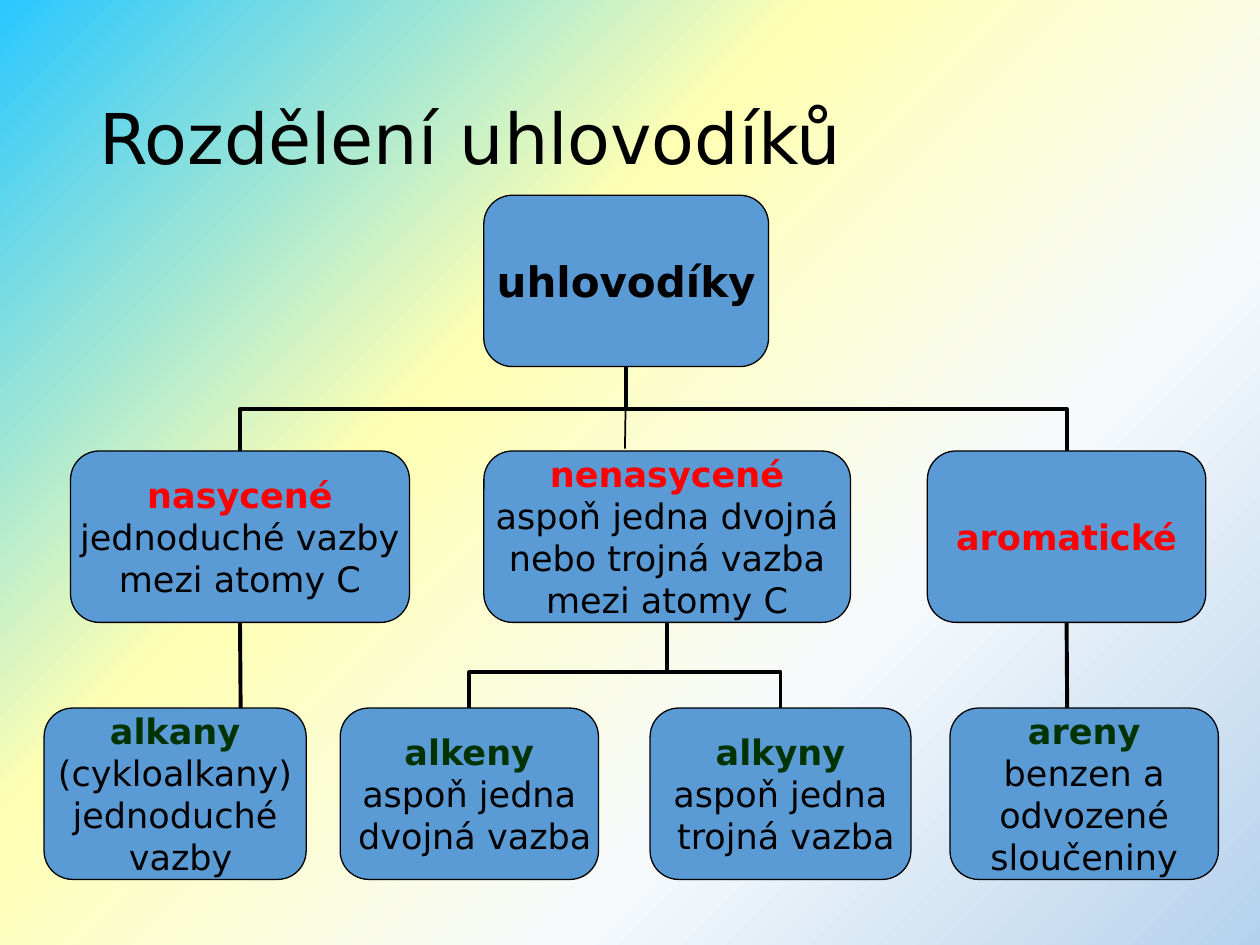
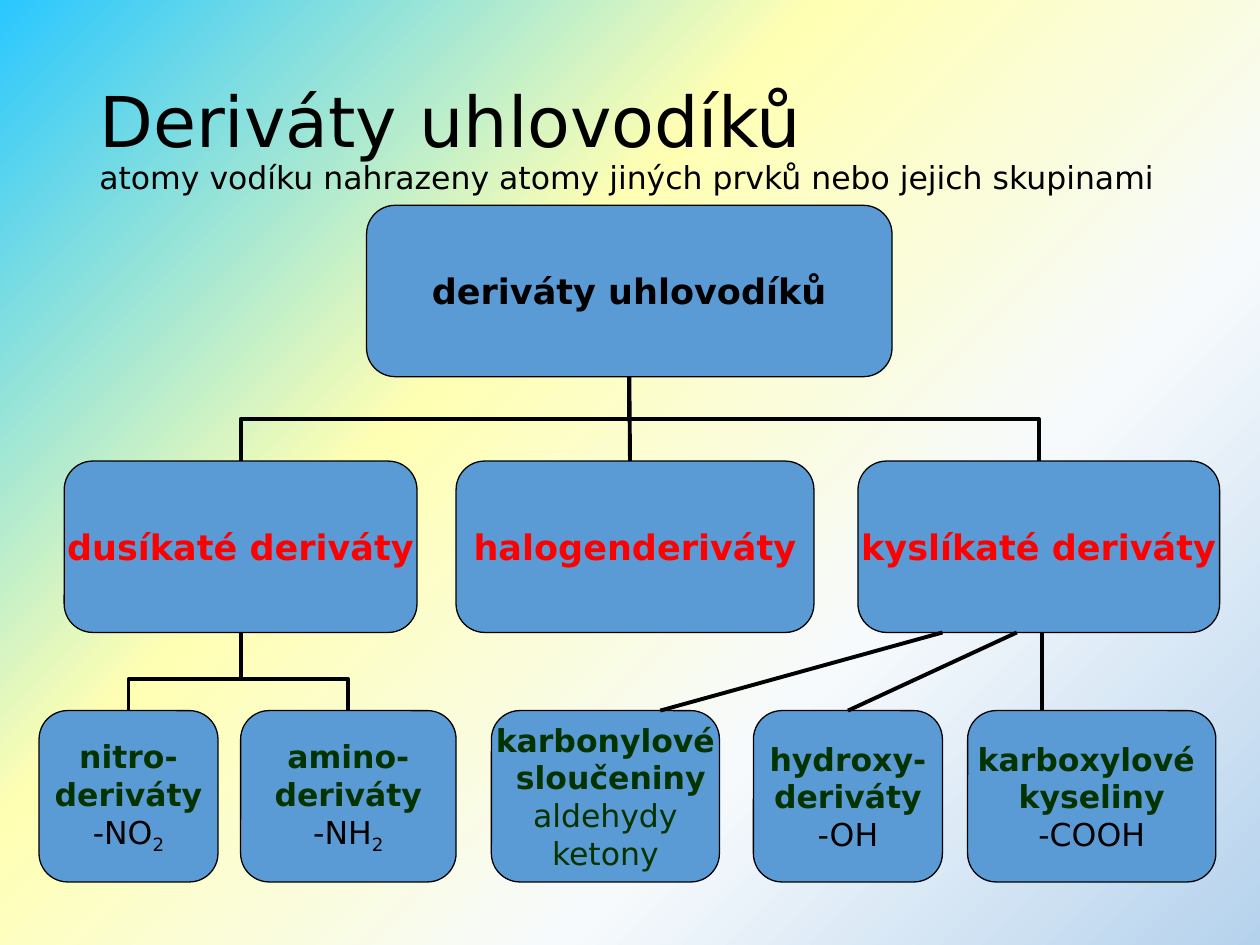
from dataclasses import dataclass

from lxml.etree import SubElement
from pptx import Presentation
from pptx.dml.color import RGBColor
from pptx.enum.shapes import MSO_CONNECTOR as Connector, MSO_SHAPE as Preset
from pptx.enum.text import MSO_ANCHOR as Anchor, PP_ALIGN as Align
from pptx.oxml.ns import qn
from pptx.util import Inches, Pt


@dataclass(frozen=True)
class Theme:
    font: str = "DejaVu Sans"
    black: str = "000000"
    red: str = "FF0000"
    green: str = "003300"
    box_fill: str = "5B9BD5"
    background: tuple = ((0, "B5D2EC"), (32, "F7FAFD"), (63, "FFFFB3"), (100, "29C7FF"))
    title_size: int = 40
    root_size: int = 24
    text_size: int = 20
    small_size: int = 18
    box_line: float = 0.75
    thin_line: float = 1
    tree_line: float = 2.25


THEME = Theme()
BOX_HEIGHT = 1.36
TOP, BOTTOM = 0, 2


def rgb(value):
    return RGBColor.from_string(value)


def set_background(master):
    """Give the master a gradient that spreads from the bottom right corner."""
    master.background.fill.gradient()
    gradient = master._element.find(".//" + qn("a:gradFill"))
    for child in list(gradient):
        gradient.remove(child)
    stops = SubElement(gradient, qn("a:gsLst"))
    for position, color in THEME.background:
        stop = SubElement(stops, qn("a:gs"), pos=str(position * 1000))
        SubElement(stop, qn("a:srgbClr"), val=color)
    spread = SubElement(gradient, qn("a:path"), path="circle")
    SubElement(spread, qn("a:fillToRect"), l="100000", t="100000")


def style_font(font, size, color, bold=False):
    font.name = THEME.font
    font.size = Pt(size)
    font.color.rgb = rgb(color)
    font.bold = bold


def add_title(slide, title, subtitle=None):
    frame = slide.shapes.add_textbox(
        Inches(0.69), Inches(0.4), Inches(8.62), Inches(1.45)).text_frame
    frame.word_wrap = True
    frame.vertical_anchor = Anchor.MIDDLE
    paragraph = frame.paragraphs[0]
    paragraph.line_spacing = 0.9
    style_font(paragraph.font, THEME.title_size, THEME.black)
    paragraph.add_run().text = title
    if subtitle:
        paragraph.add_line_break()
        run = paragraph.add_run()
        run.text = subtitle
        run.font.size = Pt(THEME.small_size)


def add_line(frame, text, is_first):
    """Add a centred paragraph; what follows "_" is set as a subscript."""
    paragraph = frame.paragraphs[0] if is_first else frame.add_paragraph()
    paragraph.alignment = Align.CENTER
    base, _, subscript = text.partition("_")
    paragraph.add_run().text = base
    if subscript:
        run = paragraph.add_run()
        run.text = subscript
        run.font._element.set("baseline", "-25000")
    return paragraph


def add_box(slide, left, top, width, heads, body=(), color=THEME.black,
            body_color=THEME.black, size=THEME.text_size):
    """Add a rounded box with bold coloured heads above plain body lines."""
    box = slide.shapes.add_shape(
        Preset.ROUNDED_RECTANGLE, Inches(left), Inches(top), Inches(width), Inches(BOX_HEIGHT))
    box.shadow.inherit = False
    box.fill.solid()
    box.fill.fore_color.rgb = rgb(THEME.box_fill)
    box.line.color.rgb = rgb(THEME.black)
    box.line.width = Pt(THEME.box_line)
    frame = box.text_frame
    frame.word_wrap = False
    frame.vertical_anchor = Anchor.MIDDLE
    frame.margin_left = frame.margin_right = frame.margin_top = frame.margin_bottom = 0
    for index, text in enumerate((*heads, *body)):
        is_head = index < len(heads)
        paragraph = add_line(frame, text, index == 0)
        style_font(paragraph.font, size, color if is_head else body_color, is_head)
    return box


def style_connector(connector, width):
    connector.line.color.rgb = rgb(THEME.black)
    connector.line.width = Pt(width)
    SubElement(connector._element.spPr, qn("a:effectLst"))


def add_straight(slide, start, end, parent=None, child=None, width=THEME.tree_line):
    """Draw a line, joined to the parent's bottom or the child's top if given."""
    connector = slide.shapes.add_connector(
        Connector.STRAIGHT, *(Inches(value) for value in (*start, *end)))
    if parent is not None:
        connector.begin_connect(parent, BOTTOM)
    if child is not None:
        connector.end_connect(child, TOP)
    style_connector(connector, width)


def add_branch(slide, parent, child, bend=0.5):
    """Draw an elbow that leaves the parent downwards and enters the child's top."""
    start_x, start_y = parent.left + parent.width // 2, parent.top + parent.height
    end_x, end_y = child.left + child.width // 2, child.top
    drop, reach = end_y - start_y, abs(end_x - start_x)
    # The unturned frame is as wide as the drop and shares its centre with the turned one.
    left = (start_x + end_x - drop) // 2
    top = (start_y + end_y - reach) // 2
    connector = slide.shapes.add_connector(
        Connector.ELBOW, left, top, left + drop, top + reach)
    transform = connector._element.spPr.find(qn("a:xfrm"))
    if end_x < start_x:
        transform.set("rot", "5400000")
    else:
        transform.set("rot", "16200000")
        transform.set("flipH", "1")
    guides = connector._element.spPr.find(qn("a:prstGeom")).get_or_add_avLst()
    SubElement(guides, qn("a:gd"), name="adj1", fmla=f"val {round(bend * 100000)}")
    style_connector(connector, THEME.tree_line)


def build_hydrocarbons(slide):
    add_title(slide, "Rozdělení uhlovodíků")
    group_top, family_top = 3.58, 5.62
    root = add_box(slide, 3.84, 1.55, 2.26, ["uhlovodíky"], size=THEME.root_size)
    saturated, unsaturated, aromatic = (
        add_box(slide, left, group_top, width, [head], body, THEME.red)
        for left, width, head, body in (
            (0.56, 2.69, "nasycené", ["jednoduché vazby", "mezi atomy C"]),
            (3.84, 2.91, "nenasycené",
             ["aspoň jedna dvojná", "nebo trojná vazba", "mezi atomy C"]),
            (7.36, 2.21, "aromatické", []),
        ))
    _, alkenes, alkynes, _ = (
        add_box(slide, left, family_top, width, [head], body, THEME.green)
        for left, width, head, body in (
            (0.35, 2.08, "alkany", ["(cykloalkany)", "jednoduché", " vazby"]),
            (2.7, 2.05, "alkeny", ["aspoň jedna", " dvojná vazba"]),
            (5.16, 2.07, "alkyny", ["aspoň jedna", " trojná vazba"]),
            (7.54, 2.13, "areny", ["benzen a", " odvozené ", "sloučeniny"]),
        ))
    for group in (saturated, aromatic):
        add_branch(slide, root, group)
    for family in (alkenes, alkynes):
        add_branch(slide, unsaturated, family, bend=0.58)
    group_bottom = group_top + BOX_HEIGHT
    add_straight(slide, (1.91, group_bottom), (1.91, family_top), parent=saturated)
    add_straight(slide, (8.47, group_bottom), (8.47, family_top), parent=aromatic)
    add_straight(slide, (4.97, 2.91), (4.96, 3.56), parent=root, width=THEME.thin_line)


def build_derivatives(slide):
    add_title(slide, "Deriváty uhlovodíků",
              "atomy vodíku nahrazeny atomy jiných prvků nebo jejich skupinami")
    group_top, family_top = 3.66, 5.64
    root = add_box(slide, 2.91, 1.63, 4.17, ["deriváty uhlovodíků"])
    nitrogenous, _, oxygenous = (
        add_box(slide, left, group_top, width, [head], color=THEME.red)
        for left, width, head in (
            (0.51, 2.8, "dusíkaté deriváty"),
            (3.62, 2.84, "halogenderiváty"),
            (6.81, 2.87, "kyslíkaté deriváty"),
        ))
    nitro, amino, _, hydroxy, _ = (
        add_box(slide, left, family_top, width, heads, body, THEME.green,
                body_color, THEME.small_size)
        for left, width, heads, body, body_color in (
            (0.31, 1.42, ["nitro-", "deriváty"], ["-NO_2"], THEME.black),
            (1.91, 1.71, ["amino-", "deriváty"], ["-NH_2"], THEME.black),
            (3.9, 1.81, ["karbonylové", " sloučeniny"], ["aldehydy", "ketony"], THEME.green),
            (5.98, 1.5, ["hydroxy-", "deriváty"], ["-OH"], THEME.black),
            (7.68, 1.97, ["karboxylové ", "kyseliny"], ["-COOH"], THEME.black),
        ))
    for group in (nitrogenous, oxygenous):
        add_branch(slide, root, group)
    for family in (nitro, amino):
        add_branch(slide, nitrogenous, family, bend=0.6)
    group_bottom = group_top + BOX_HEIGHT
    add_straight(slide, (5, 2.99), (5, group_top), parent=root)
    add_straight(slide, (7.48, group_bottom), (5.24, family_top))
    add_straight(slide, (8.07, group_bottom), (6.73, family_top), child=hydroxy)
    add_straight(slide, (8.27, group_bottom), (8.27, family_top))


def main():
    presentation = Presentation()
    presentation.slide_width = Inches(10)
    presentation.slide_height = Inches(7.5)
    set_background(presentation.slide_master)
    blank = presentation.slide_layouts[6]
    for build in (build_hydrocarbons, build_derivatives):
        build(presentation.slides.add_slide(blank))
    presentation.save("out.pptx")


if __name__ == "__main__":
    main()
